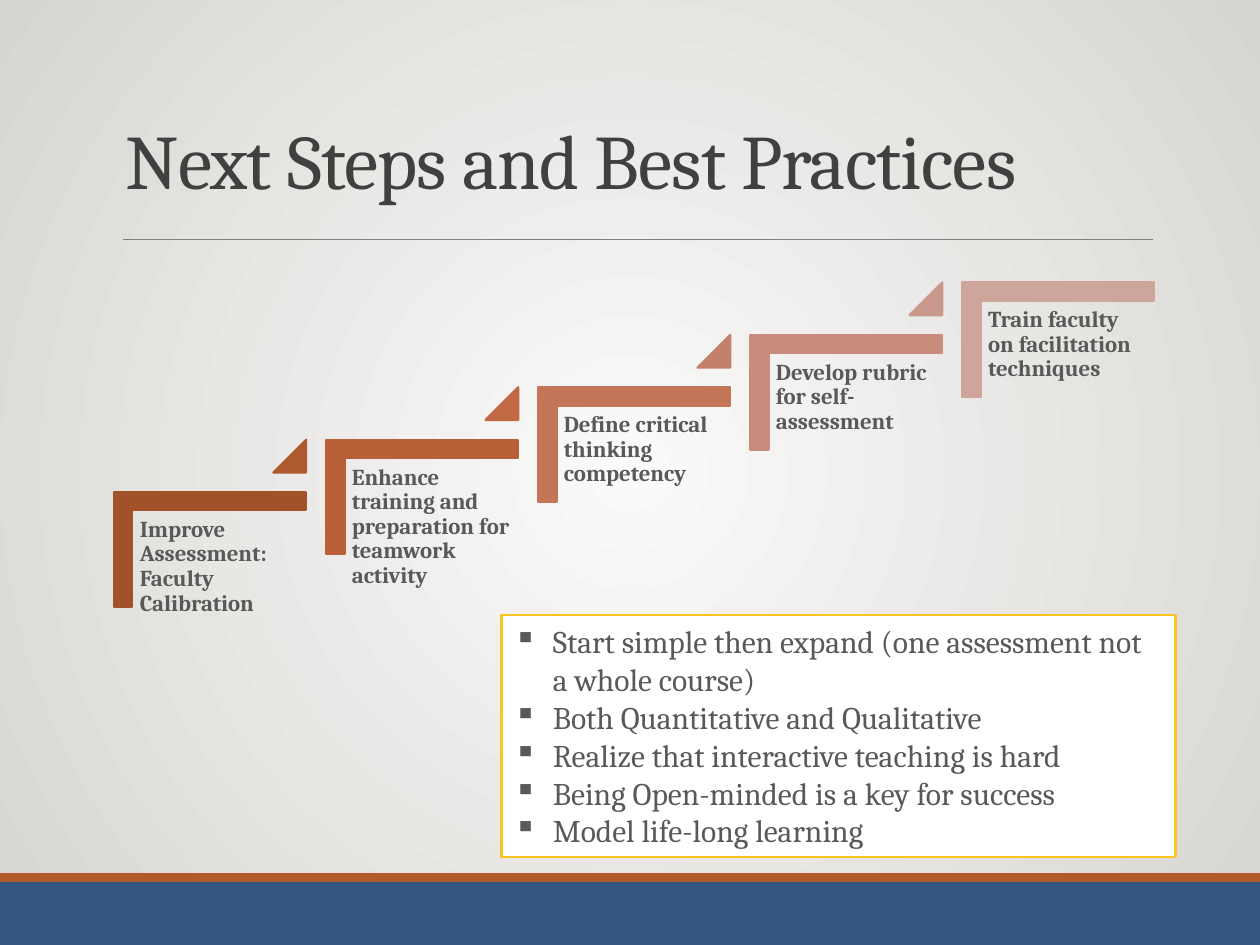
from lxml.etree import SubElement
from pptx import Presentation
from pptx.dml.color import RGBColor
from pptx.enum.shapes import MSO_CONNECTOR, MSO_SHAPE
from pptx.enum.text import MSO_ANCHOR, MSO_AUTO_SIZE, PP_ALIGN
from pptx.oxml.ns import qn
from pptx.util import Inches, Pt

FONT = "Cambria"
COLUMNS, ROWS = 100, 75
WIDTH, HEIGHT = Inches(10), Inches(7.5)
STEP_COLUMNS, STEP_ROWS = 16.83, -4.16

CENTRE, EDGE = RGBColor(0xFA, 0xFA, 0xF9), RGBColor(0xD7, 0xD5, 0xD2)
BLUE, RUST = RGBColor(0x34, 0x57, 0x82), RGBColor(0xB3, 0x5A, 0x2D)
RULE_GREY, TITLE_GREY = RGBColor(0x80, 0x80, 0x80), RGBColor(0x40, 0x40, 0x40)
TEXT_GREY, WHITE = RGBColor(0x59, 0x59, 0x59), RGBColor(0xFF, 0xFF, 0xFF)
GOLD = RGBColor(0xF8, 0xC5, 0x22)
STEP_COLOURS = [RGBColor.from_string(c) for c in
                ("A25229", "BA6039", "C37557", "C78D7A", "CEA59B")]
ARROW_COLOURS = [RGBColor.from_string(c) for c in
                 ("AF5930", "C16945", "C48169", "CA998B")]

STEPS = [
    "Improve Assessment: Faculty Calibration",
    "Enhance training and preparation for teamwork activity",
    "Define critical thinking competency",
    "Develop rubric for self-assessment",
    "Train faculty on facilitation techniques",
]
PRACTICES = [
    "Start simple then expand (one assessment not a whole course)",
    "Both Quantitative and Qualitative",
    "Realize that interactive teaching is hard",
    "Being Open-minded is a key for success",
    "Model life-long learning",
]


def grid(column, row, columns, rows):
    """Turn grid cells into left, top, width and height."""
    across, down = WIDTH / COLUMNS, HEIGHT / ROWS
    return [round(v) for v in (column * across, row * down, columns * across, rows * down)]


def paint_background(slide):
    """Fill the slide with a gradient that spreads from its centre."""
    fill = slide.background.fill
    fill.gradient()
    for stop, colour in zip(fill.gradient_stops, (CENTRE, EDGE)):
        stop.color.rgb = colour
    gradient = slide.element.find(".//" + qn("a:gradFill"))
    gradient.remove(gradient.find(qn("a:lin")))
    spread = SubElement(gradient, qn("a:path"), path="circle")
    SubElement(spread, qn("a:fillToRect"), l="50000", t="50000", r="50000", b="50000")


def add_block(slide, kind, cells, fill, outline=None):
    """Add a flat preset shape, outlined only when a colour is given."""
    block = slide.shapes.add_shape(kind, *grid(*cells))
    block.shadow.inherit = False
    block.fill.solid()
    block.fill.fore_color.rgb = fill
    if outline is None:
        block.line.fill.background()
    else:
        block.line.color.rgb = outline
        block.line.width = Pt(1.25)
    return block


def add_rule(slide, column, row, columns):
    """Add the thin line under the title."""
    left, top, width, _ = grid(column, row, columns, 0)
    rule = slide.shapes.add_connector(MSO_CONNECTOR.STRAIGHT, left, top, left + width, top)
    rule.line.color.rgb = RULE_GREY
    rule.line.width = Pt(0.5)
    SubElement(rule._element.spPr, qn("a:effectLst"))


def style_text(paragraph, size, colour, bold=False):
    """Give every run of a paragraph its font, size and colour."""
    for run in paragraph.runs:
        run.font.name = FONT
        run.font.size = Pt(size)
        run.font.bold = bold
        run.font.color.rgb = colour


def add_text(slide, cells, text, size, colour, spacing, bold=False):
    """Add a wrapping text box with one paragraph and return its frame."""
    frame = slide.shapes.add_textbox(*grid(*cells)).text_frame
    frame.word_wrap = True
    frame.text = text
    frame.paragraphs[0].line_spacing = spacing
    style_text(frame.paragraphs[0], size, colour, bold)
    return frame


def add_title(slide, text):
    """Add the slide title, resting on the bottom of its box."""
    frame = add_text(slide, (9, 3.1, 82.5, 13.7), text, 44, TITLE_GREY, 0.85)
    frame.vertical_anchor = MSO_ANCHOR.BOTTOM
    frame.paragraphs[0].runs[0]._r.get_or_add_rPr().set("spc", "-50")


def add_step(slide, index, text):
    """Add one stair: its corner, its label and the arrow to the next."""
    column, row = index * STEP_COLUMNS, index * STEP_ROWS
    colour = STEP_COLOURS[index]
    corner = add_block(slide, MSO_SHAPE.CORNER, (12.1 + column, 36 + row, 9.1, 15.2),
                       colour, colour)
    corner.rotation = 90
    corner.adjustments[0] = corner.adjustments[1] = 0.16
    label = add_text(slide, (10.6 + column, 40.6 + row, 13.7, 12), text, 13,
                     TEXT_GREY, 0.9, bold=True)
    label.margin_left = label.margin_right = Inches(0.05)
    label.margin_top = label.margin_bottom = Inches(0.05)
    if index < len(ARROW_COLOURS):
        shade = ARROW_COLOURS[index]
        arrow = add_block(slide, MSO_SHAPE.ISOSCELES_TRIANGLE,
                          (21.7 + column, 34.9 + row, 2.6, 2.6), shade, shade)
        arrow.adjustments[0] = 1


def add_practices(slide, practices):
    """Add the framed list of best practices."""
    frame = add_block(slide, MSO_SHAPE.RECTANGLE, (39.8, 48.8, 53.5, 19.2), WHITE, GOLD).text_frame
    frame.word_wrap = True
    frame.auto_size = MSO_AUTO_SIZE.SHAPE_TO_FIT_TEXT
    frame.text = "\n".join(practices)
    indent = Inches(0.31)
    for paragraph in frame.paragraphs:
        paragraph.alignment = PP_ALIGN.LEFT
        style_text(paragraph, 18, TEXT_GREY)
        properties = paragraph._p.get_or_add_pPr()
        properties.set("marL", str(indent))
        properties.set("indent", str(-indent))
        SubElement(properties, qn("a:buChar"), char="▪")


def main():
    """Build and save the slide."""
    deck = Presentation()
    deck.slide_width, deck.slide_height = WIDTH, HEIGHT
    slide = deck.slides.add_slide(deck.slide_layouts[6])
    paint_background(slide)
    add_block(slide, MSO_SHAPE.RECTANGLE, (0, 70, COLUMNS, 5), BLUE)
    add_block(slide, MSO_SHAPE.RECTANGLE, (0, 69.3, COLUMNS, 0.7), RUST)
    add_rule(slide, 9.8, 19, 81.7)
    add_title(slide, "Next Steps and Best Practices")
    for index, text in enumerate(STEPS):
        add_step(slide, index, text)
    add_practices(slide, PRACTICES)
    deck.save("out.pptx")


if __name__ == "__main__":
    main()
